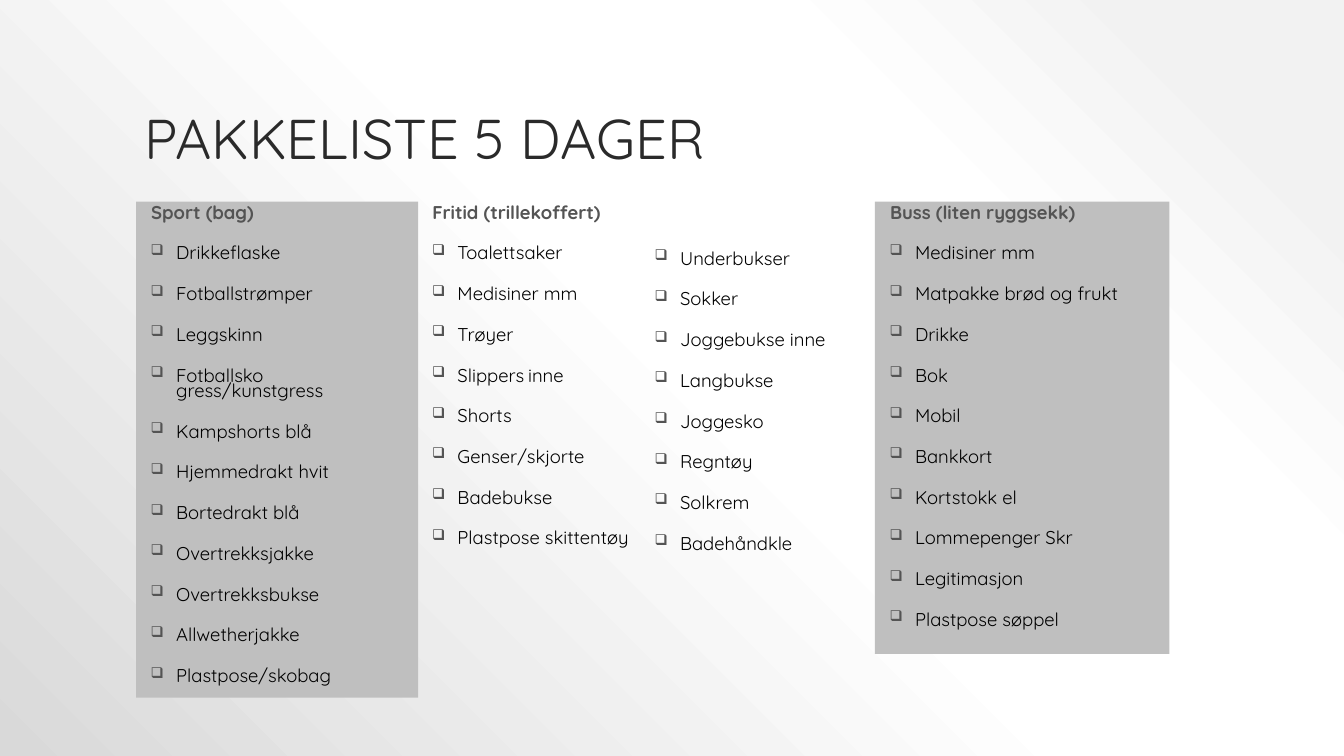
from dataclasses import dataclass

from lxml import etree
from pptx import Presentation
from pptx import util as u
from pptx.dml.color import RGBColor
from pptx.enum import shapes, text
from pptx.oxml.ns import qn


@dataclass(frozen=True)
class Theme:
    font: str = "Quicksand"
    title_size: float = 40
    list_size: float = 13.2
    title: str = "2A2A2A"
    heading: str = "545454"
    item: str = "000000"
    panel: str = "BFBFBF"
    background: tuple = ((10, "F2F2F2"), (28, "FFFFFF"), (48, "FFFFFF"), (100, "D9D9D9"))


THEME = Theme()
TOP = 5.08
INSET_TOP = 0.13
HEADING_HEIGHT = 1.16

SPORT = ["Drikkeflaske", "Fotballstrømper", "Leggskinn", "Fotballsko gress/kunstgress",
         "Kampshorts blå", "Hjemmedrakt hvit", "Bortedrakt blå", "Overtrekksjakke",
         "Overtrekksbukse", "Allwetherjakke", "Plastpose/skobag"]
LEISURE = ["Toalettsaker", "Medisiner mm", "Trøyer", "Slippers\tinne", "Shorts",
           "Genser/skjorte", "Badebukse", "Plastpose skittentøy"]
LEISURE_MORE = ["Underbukser", "Sokker", "Joggebukse inne", "Langbukse", "Joggesko",
                "Regntøy", "Solkrem", "Badehåndkle"]
BUS = ["Medisiner mm", "Matpakke brød og frukt", "Drikke", "Bok", "Mobil", "Bankkort",
       "Kortstokk el", "Lommepenger Skr", "Legitimasjon", "Plastpose søppel"]


def add_run(paragraph, words, size, color, bold=False):
    run = paragraph.add_run()
    run.text = words
    run.font.name = THEME.font
    run.font.size = u.Pt(size)
    run.font.bold = bold
    run.font.color.rgb = RGBColor.from_string(color)


def add_color(parent, color):
    etree.SubElement(parent, qn("a:srgbClr"), val=color)


def paint_background(slide):
    """Radial gradient that spreads from the top right corner."""
    slide.background.fill.gradient()
    gradient = slide.element.find(".//" + qn("a:gradFill"))
    for child in list(gradient):
        gradient.remove(child)
    stops = etree.SubElement(gradient, qn("a:gsLst"))
    for percent, color in THEME.background:
        add_color(etree.SubElement(stops, qn("a:gs"), pos=str(percent * 1000)), color)
    circle = etree.SubElement(gradient, qn("a:path"), path="circle")
    etree.SubElement(circle, qn("a:fillToRect"), l="100000", b="100000")


def place_title(slide, words, left, top, width, height):
    title = slide.shapes.title
    title.left, title.top = u.Cm(left), u.Cm(top)
    title.width, title.height = u.Cm(width), u.Cm(height)
    frame = title.text_frame
    frame.auto_size = text.MSO_AUTO_SIZE.NONE
    frame.vertical_anchor = text.MSO_ANCHOR.BOTTOM
    line = frame.paragraphs[0]
    line.alignment = text.PP_ALIGN.LEFT
    line.line_spacing = 0.9
    add_run(line, words, THEME.title_size, THEME.title)


def set_indent(paragraph, margin, hanging=0.0):
    properties = paragraph._p.get_or_add_pPr()
    properties.set("marL", str(u.Cm(margin)))
    properties.set("indent", str(u.Cm(-hanging)))
    return properties


def add_checkbox(paragraph):
    properties = set_indent(paragraph, 0.76, 0.64)
    add_color(etree.SubElement(properties, qn("a:buClr")), THEME.heading)
    etree.SubElement(properties, qn("a:buSzPct"), val="80000")
    etree.SubElement(properties, qn("a:buChar"), char="❑")


def add_packing_list(slide, heading, items, left, top, width, height, shaded=False):
    """Checklist; without a heading, the heading's room stays free."""
    box = [u.Cm(length) for length in (left, top, width, height)]
    if shaded:
        column = slide.shapes.add_shape(shapes.MSO_SHAPE.RECTANGLE, *box)
        column.shadow.inherit = False
        column.fill.solid()
        column.fill.fore_color.rgb = RGBColor.from_string(THEME.panel)
        column.line.fill.background()
    else:
        column = slide.shapes.add_textbox(*box)
    frame = column.text_frame
    frame.word_wrap = True
    frame.vertical_anchor = text.MSO_ANCHOR.TOP
    frame.margin_top = u.Cm(INSET_TOP if heading else INSET_TOP + HEADING_HEIGHT)

    entries = ([heading] if heading else []) + items
    for index, entry in enumerate(entries):
        line = frame.add_paragraph() if index else frame.paragraphs[0]
        line.alignment = text.PP_ALIGN.LEFT
        line.line_spacing = 0.7
        line.space_before = u.Pt(18 if index else 0)
        if entry == heading:
            set_indent(line, 0.13)
            add_run(line, entry, THEME.list_size, THEME.heading, bold=True)
        else:
            add_checkbox(line)
            add_run(line, entry, THEME.list_size, THEME.item)


def build_packing_slide(deck):
    slide = deck.slides.add_slide(deck.slide_layouts.get_by_name("Title Only"))
    paint_background(slide)
    place_title(slide, "PAKKELISTE 5 DAGER", 3.38, 0.76, 27.1, 3.68)
    add_packing_list(slide, "Sport (bag)", SPORT, 3.43, TOP, 7.11, 12.5, shaded=True)
    add_packing_list(slide, "Fritid (trillekoffert)", LEISURE, 10.52, TOP, 6.6, 13.44)
    add_packing_list(slide, "Buss (liten ryggsekk)", BUS, 22.05, TOP, 7.42, 11.4, shaded=True)
    add_packing_list(slide, None, LEISURE_MORE, 16.13, TOP, 5.21, 9.45)


def main():
    deck = Presentation()
    deck.slide_width, deck.slide_height = u.Cm(33.87), u.Cm(19.05)
    build_packing_slide(deck)
    deck.save("out.pptx")


if __name__ == "__main__":
    main()
